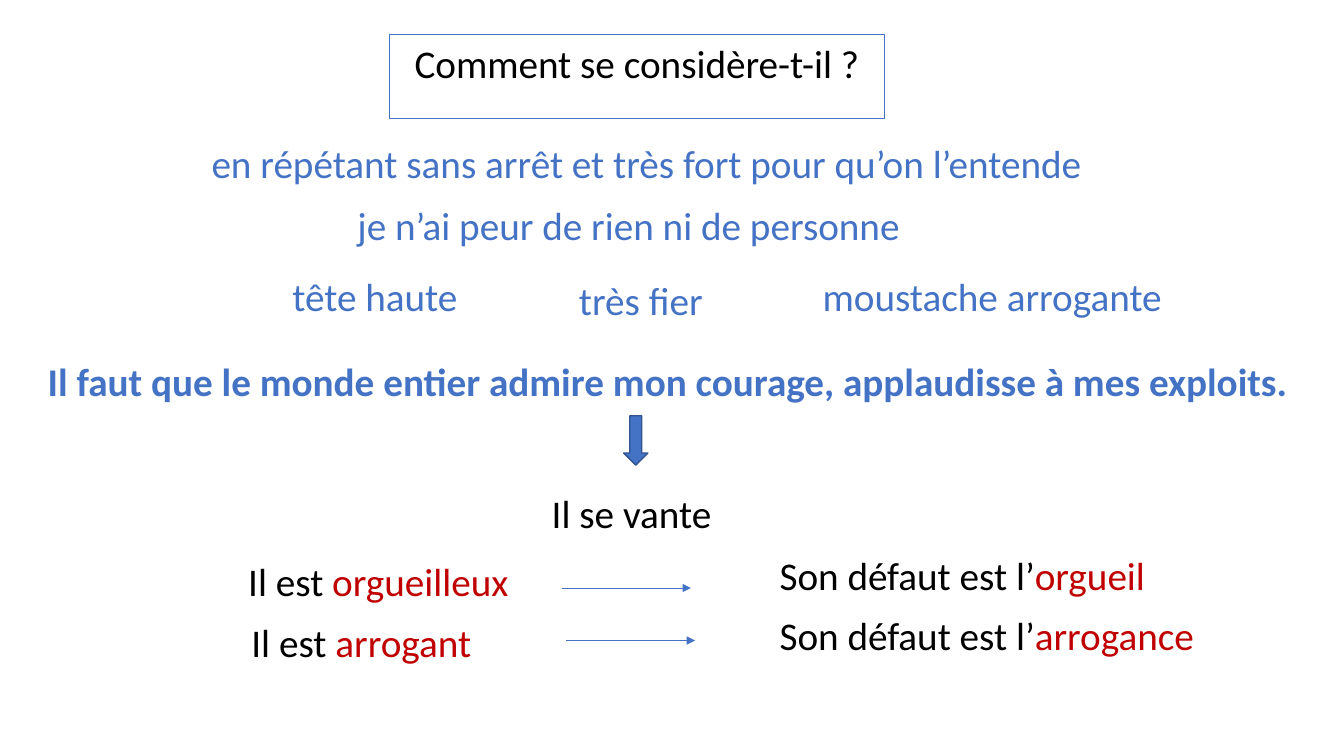
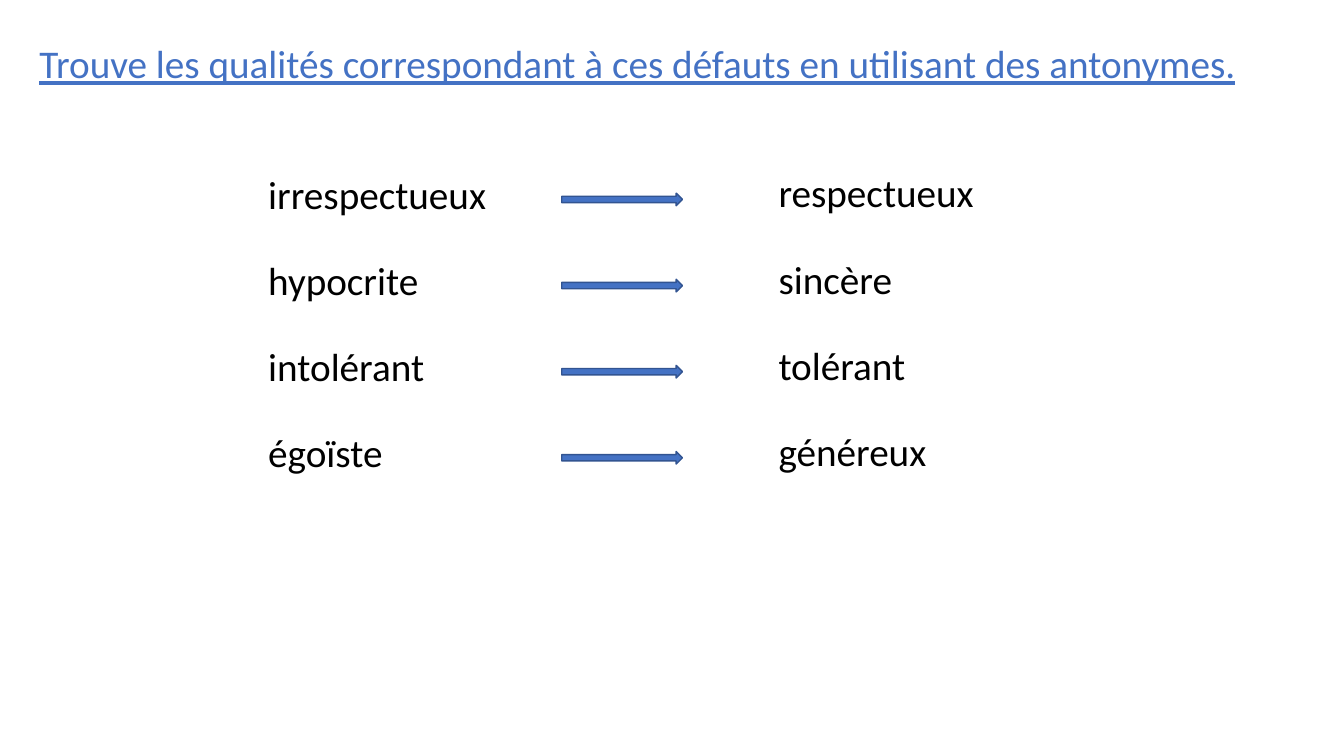
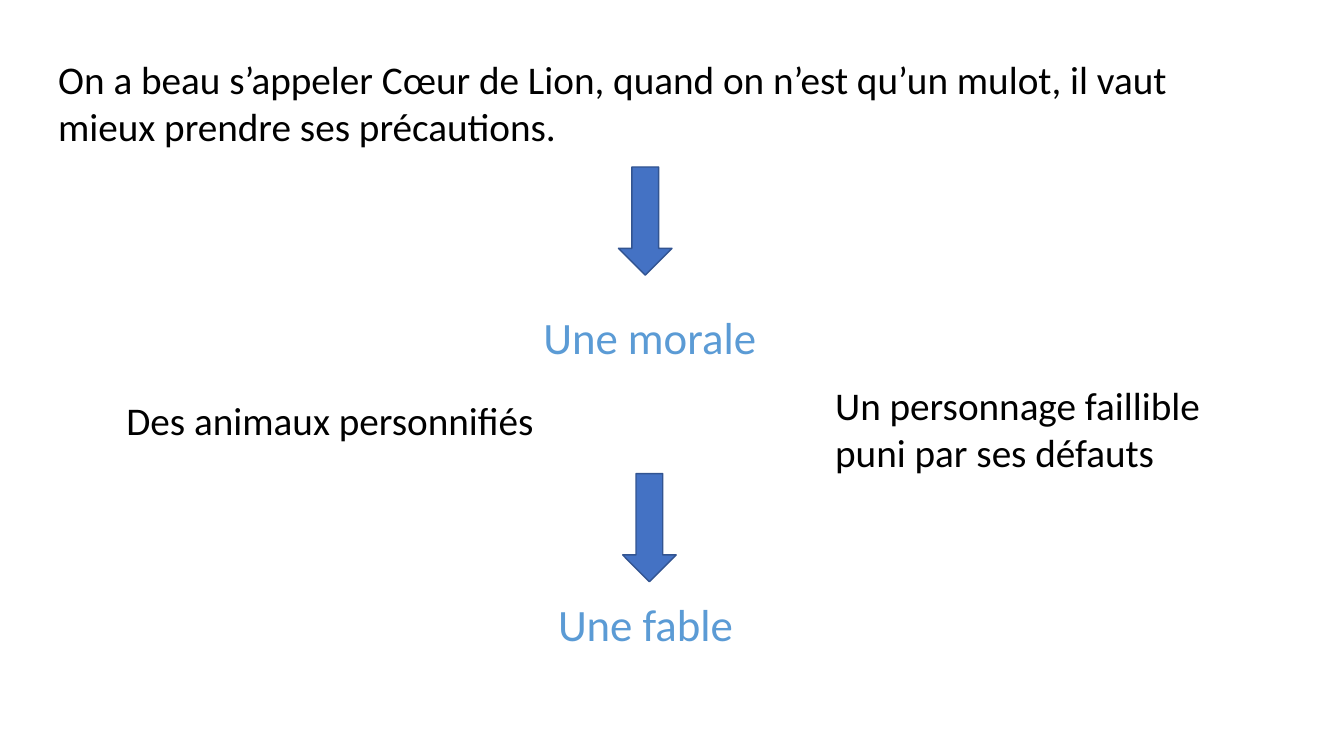
from lxml.etree import SubElement
from pptx import Presentation
from pptx.dml.color import RGBColor
from pptx.enum.shapes import MSO_CONNECTOR, MSO_SHAPE
from pptx.enum.text import MSO_ANCHOR, MSO_AUTO_SIZE, PP_ALIGN
from pptx.oxml.ns import qn
from pptx.util import Pt

PX = 9525
COLOURS = {
    "text": "000000",
    "blue": "4472C4",
    "outline": "325491",
    "red": "C00000",
    "sky": "5B9BD5",
}
TITLE_ONLY, BLANK = 5, 6


def colour(name):
    return RGBColor.from_string(COLOURS[name])


class Lesson:
    """Holds the shared style and the slide being filled; lengths are in px."""

    font_name = "Calibri"
    line_height = 55

    def __init__(self):
        self.deck = Presentation()
        self.deck.slide_width = 1280 * PX
        self.deck.slide_height = 720 * PX
        self.slide = None

    def add_slide(self, layout):
        self.slide = self.deck.slides.add_slide(self.deck.slide_layouts[layout])

    def set_words(self, frame, words, ink, size=28, bold=None, underline=None,
                  align=PP_ALIGN.LEFT, accent=""):
        """Fill a text frame with one paragraph, ending in an optional red accent."""
        frame.word_wrap = True
        frame.auto_size = MSO_AUTO_SIZE.SHAPE_TO_FIT_TEXT
        frame.vertical_anchor = MSO_ANCHOR.TOP
        paragraph = frame.paragraphs[0]
        paragraph.alignment = align
        font = paragraph.font
        font.name, font.size = self.font_name, Pt(size)
        font.bold, font.underline = bold, underline
        font.color.rgb = colour(ink)
        paragraph.add_run().text = words
        if accent:
            ending = paragraph.add_run()
            ending.text = accent
            ending.font.color.rgb = colour("red")

    def title(self, left, top, width, words, ink, boxed=False, **style):
        heading = self.slide.shapes.title
        heading.left, heading.top = left * PX, top * PX
        heading.width, heading.height = width * PX, self.line_height * PX
        if boxed:
            heading.line.color.rgb = colour("blue")
            heading.line.width = Pt(0.75)
        self.set_words(heading.text_frame, words, ink, **style)

    def text(self, left, top, width, words, ink="text", height=line_height, **style):
        box = self.slide.shapes.add_textbox(
            left * PX, top * PX, width * PX, height * PX)
        self.set_words(box.text_frame, words, ink, **style)

    def block_arrow(self, kind, left, top, width, height):
        arrow = self.slide.shapes.add_shape(
            kind, left * PX, top * PX, width * PX, height * PX)
        arrow.shadow.inherit = False
        arrow.fill.solid()
        arrow.fill.fore_color.rgb = colour("blue")
        arrow.line.color.rgb = colour("outline")
        arrow.line.width = Pt(1)

    def thin_arrow(self, left, top, length):
        arrow = self.slide.shapes.add_connector(
            MSO_CONNECTOR.STRAIGHT,
            left * PX, top * PX, (left + length) * PX, top * PX)
        arrow.line.color.rgb = colour("blue")
        arrow.line.width = Pt(0.5)
        properties = arrow.element.spPr
        SubElement(properties.find(qn("a:ln")), qn("a:tailEnd"), type="triangle")
        SubElement(properties, qn("a:effectLst"))


def build_self_image(lesson):
    lesson.add_slide(TITLE_ONLY)
    lesson.title(371, 33, 471, "Comment se considère-t-il ?", "text",
                 boxed=True, align=PP_ALIGN.CENTER)
    for left, top, width, clue in [
        (192, 128, 871, "en répétant sans arrêt et très fort pour qu’on l’entende"),
        (331, 187, 570, "je n’ai peur de rien ni de personne"),
        (269, 255, 208, "tête haute"),
        (542, 258, 208, "très fier"),
        (774, 255, 382, "moustache arrogante"),
    ]:
        lesson.text(left, top, width, clue, "blue")
    lesson.text(
        23, 336, 1225,
        "Il faut que le monde entier admire mon courage, applaudisse à mes exploits.",
        "blue", bold=True, align=PP_ALIGN.CENTER)
    lesson.block_arrow(MSO_SHAPE.DOWN_ARROW, 594, 396, 23, 47)
    lesson.text(516, 461, 183, "Il se vante")
    for left, top, adjective in [(227, 526, "orgueilleux"), (230, 584, "arrogant")]:
        lesson.text(left, top, 280, "Il est ", accent=adjective)
    for left, top in [(535, 560), (539, 610)]:
        lesson.thin_arrow(left, top, 123)
    for top, width, flaw in [(520, 410, "orgueil"), (577, 470, "arrogance")]:
        lesson.text(733, top, width, "Son défaut est l’", accent=flaw)


def build_antonyms(lesson):
    lesson.add_slide(TITLE_ONLY)
    lesson.title(
        28, 33, 1201,
        "Trouve les qualités correspondant à ces défauts en utilisant des antonymes.",
        "blue", underline=True)
    antonyms = [
        ("irrespectueux", "respectueux"),
        ("hypocrite", "sincère"),
        ("intolérant", "tolérant"),
        ("égoïste", "généreux"),
    ]
    for row, (flaw, quality) in enumerate(antonyms):
        top = 157 + 82 * row
        lesson.text(246, top, 247, flaw)
        lesson.block_arrow(MSO_SHAPE.RIGHT_ARROW, 535, top + 27, 115, 12)
        lesson.text(732, top - 1, 247, quality)


def build_fable(lesson):
    lesson.add_slide(BLANK)
    lesson.text(
        46, 48, 1130,
        "On a beau s’appeler Cœur de Lion, quand on n’est qu’un mulot, "
        "il vaut mieux prendre ses précautions.", height=100)
    for left, top in [(589, 159), (593, 451)]:
        lesson.block_arrow(MSO_SHAPE.DOWN_ARROW, left, top, 51, 103)
    for left, top, width, genre in [
        (508, 290, 258, "Une morale"),
        (522, 564, 215, "Une fable"),
    ]:
        lesson.text(left, top, width, genre, "sky", height=61, size=32)
    lesson.text(111, 373, 419, "Des animaux personnifiés")
    lesson.text(786, 358, 419, "Un personnage faillible puni par ses défauts",
                height=100)


def main():
    lesson = Lesson()
    build_self_image(lesson)
    build_antonyms(lesson)
    build_fable(lesson)
    lesson.deck.save("out.pptx")


if __name__ == "__main__":
    main()
